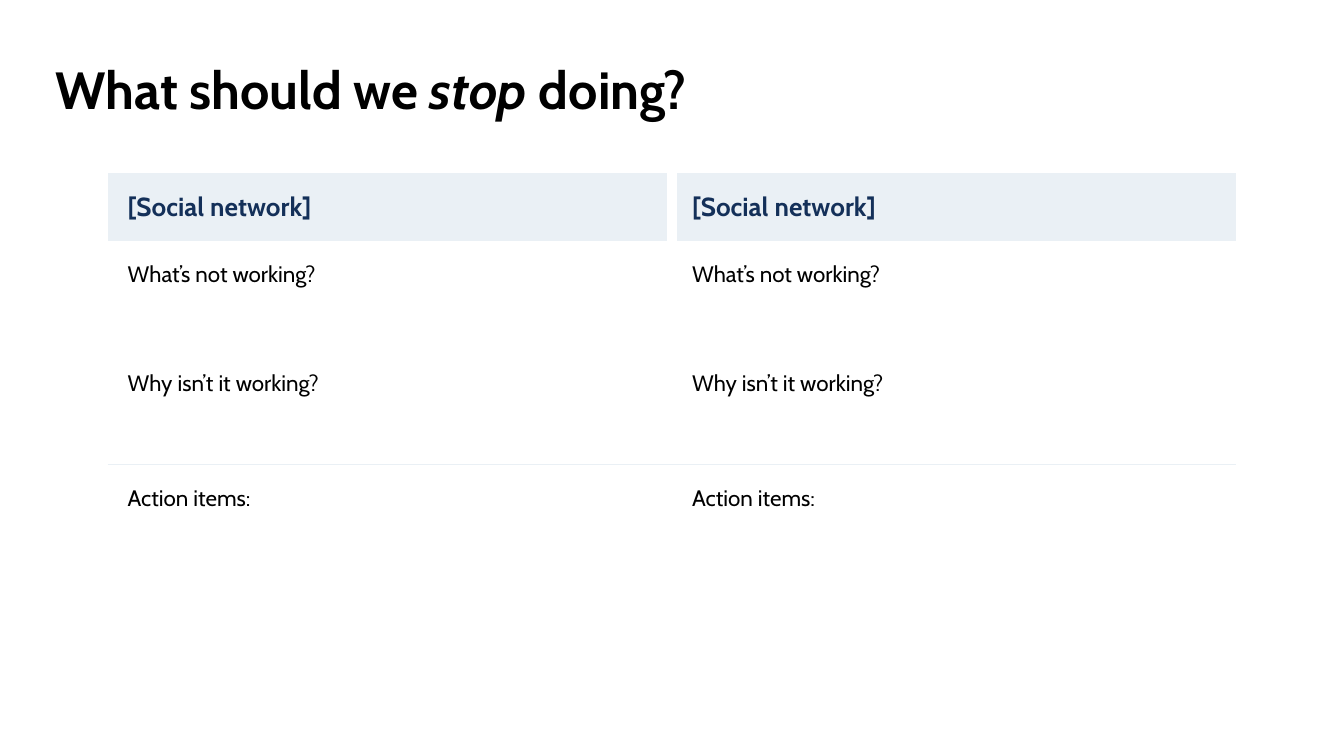
from lxml.etree import SubElement
from pptx import Presentation
from pptx.dml.color import RGBColor
from pptx.enum.text import MSO_ANCHOR as Anchor, MSO_AUTO_SIZE as AutoSize, PP_ALIGN as Align
from pptx.oxml.ns import qn
from pptx.util import Pt

NAVY, PALE, WHITE, BLACK = "143059", "EAF0F5", "FFFFFF", "000000"
NO_STYLE = "{2D5ABB26-0587-4C30-8999-92F81FD0307C}"


def add_text(paragraph, text, size=12, color=BLACK, bold=False, italic=False, before=0):
    paragraph.alignment = Align.LEFT
    paragraph.space_before = Pt(before)
    run = paragraph.add_run()
    run.text = text
    font = run.font
    font.name, font.size, font.bold, font.italic = "Cabin", Pt(size), bold, italic
    font.color.rgb = RGBColor.from_string(color)


def add_border(cell, side, color, width):
    line = SubElement(cell._tc.get_or_add_tcPr(), qn(f"a:ln{side}"), w=str(Pt(width)))
    SubElement(SubElement(line, qn("a:solidFill")), qn("a:srgbClr"), val=color)


prs = Presentation()
prs.slide_width, prs.slide_height = Pt(720), Pt(405)
slide = prs.slides.add_slide(prs.slide_layouts[5])

# Title
title = slide.shapes.title
title.left, title.top, title.width, title.height = Pt(25.2), Pt(28.1), Pt(601.2), Pt(42.5)
heading = title.text_frame
heading.auto_size = AutoSize.NONE
heading.word_wrap = True
heading.vertical_anchor = Anchor.MIDDLE
heading.margin_left = Pt(4.5)
heading.margin_right = heading.margin_top = heading.margin_bottom = Pt(7.2)
heading.paragraphs[0].line_spacing = 0.9
for words, italic in [("What should we ", False), ("stop", True), (" doing?", False)]:
    add_text(heading.paragraphs[0], words, size=28, bold=True, italic=italic)

# Review table: one column per social network
row_texts = [
    ["[Social network]"],
    ["What’s not working?", "Why isn’t it working?"],
    ["Action items:"],
]
row_heights = [36, 120, 120]
review = slide.shapes.add_table(3, 2, Pt(57.6), Pt(92.9), Pt(604.8), Pt(sum(row_heights))).table
review._tbl.tblPr[0].text = NO_STYLE
review.first_row = review.horz_banding = False

for row, (texts, height) in enumerate(zip(row_texts, row_heights)):
    review.rows[row].height = Pt(height)
    is_header = row == 0
    for column in range(2):
        cell = review.cell(row, column)
        cell.margin_left = cell.margin_right = Pt(10.8)
        cell.margin_top = Pt(7.2 if is_header else 10.8)
        cell.margin_bottom = Pt(7.2)
        cell.vertical_anchor = Anchor.MIDDLE if is_header else Anchor.TOP

        # White gutter between columns, thin rule above the action items
        add_border(cell, "R" if column == 0 else "L", WHITE, 6)
        if row == 1:
            add_border(cell, "B", PALE, 0.75)
        elif row == 2:
            add_border(cell, "T", PALE, 0.75)

        if is_header:
            cell.fill.solid()
            cell.fill.fore_color.rgb = RGBColor.from_string(PALE)
        else:
            cell.fill.background()

        for index, text in enumerate(texts):
            frame = cell.text_frame
            paragraph = frame.add_paragraph() if index else frame.paragraphs[0]
            if is_header:
                add_text(paragraph, text, size=14, color=NAVY, bold=True)
            else:
                add_text(paragraph, text, before=44 * index)

prs.save("out.pptx")
